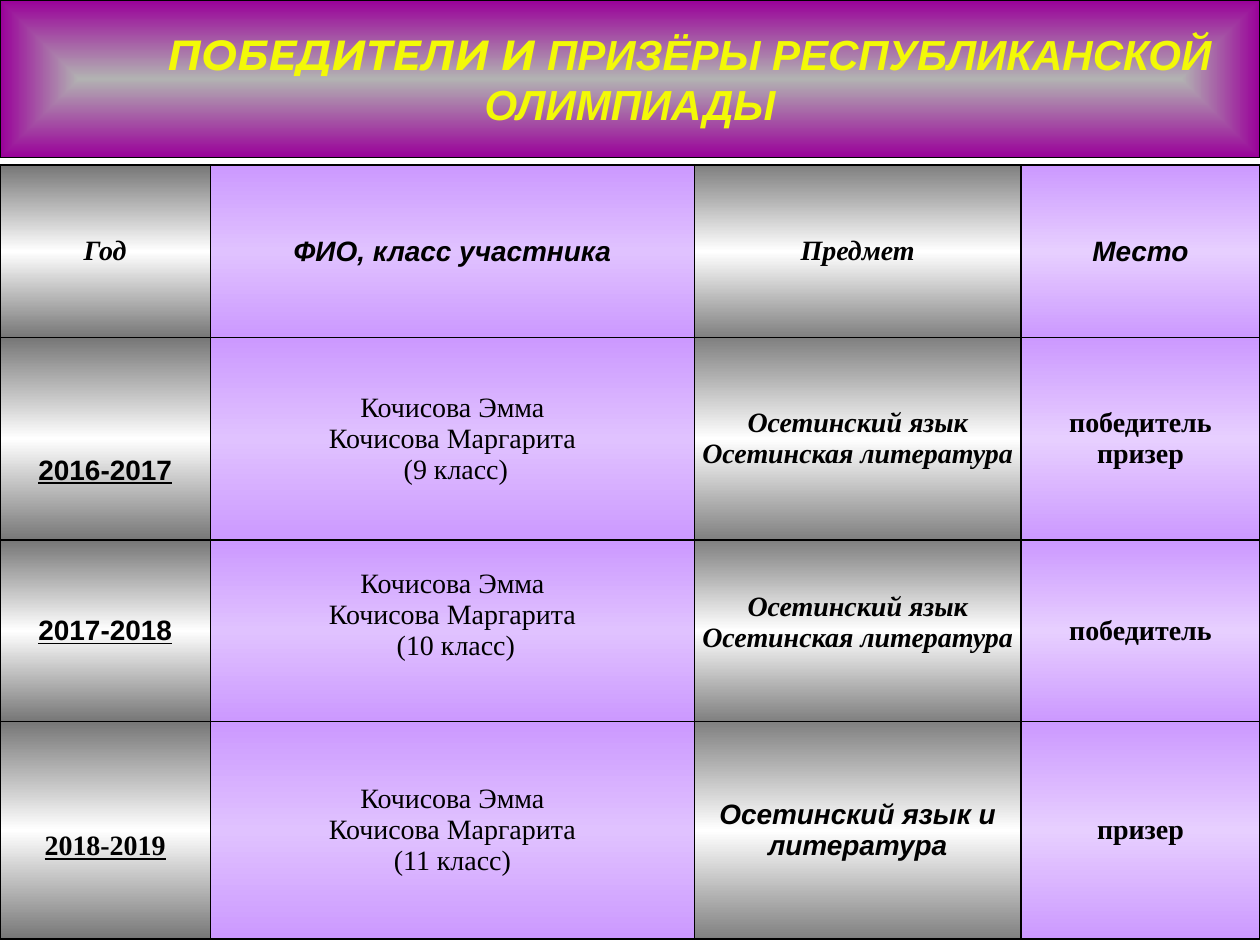
from lxml import etree
from pptx import Presentation
from pptx.dml.color import RGBColor
from pptx.enum.text import MSO_ANCHOR, PP_ALIGN
from pptx.oxml.ns import qn
from pptx.util import Cm, Pt

CENTER = PP_ALIGN.CENTER
MIDDLE = MSO_ANCHOR.MIDDLE
TITLE_ONLY = 5
SERIF, SANS, DISPLAY = "Times New Roman", "Arial", "Montserrat"
BLACK = "000000"

COLUMN_WIDTHS = [4.24, 9.76, 6.58, 4.82]
ROW_HEIGHTS = [3.48, 4.09, 3.66, 4.39]
COLUMN_GRADIENTS = [
    ["777777", "FFFFFF", "777777"],
    ["CC99FF", "E0C2FF", "CC99FF"],
    ["808080", "FFFFFF", "808080"],
    ["CC99FF", "E7CFFF", "CC99FF"],
]
COLUMN_STYLES = [
    {"bold": True, "underline": True},
    {"bold": False},
    {"bold": True, "italic": True},
    {"bold": True},
]
HEADER_STYLE = {"bold": True, "italic": True}
PUPILS = ["Кочисова Эмма", "Кочисова Маргарита"]
SUBJECTS = ["Осетинский язык Осетинская литература"]
ROWS = [
    [["Год"], ["ФИО, класс участника"], ["Предмет"], ["Место"]],
    [["2016-2017"], PUPILS + [" (9 класс)"], SUBJECTS, ["победитель", "призер"]],
    [["2017-2018"], PUPILS + [" (10 класс)"], SUBJECTS, ["победитель"]],
    [["2018-2019"], PUPILS + ["(11 класс)"], ["Осетинский язык и литература"], ["призер"]],
]
SANS_CELLS = {(0, 1), (0, 3), (1, 0), (2, 0), (3, 2)}
CELL_OFFSETS = {
    (1, 0): {"margin_top": Cm(1.27)},
    (2, 1): {"margin_bottom": Cm(0.64)},
    (2, 2): {"margin_bottom": Cm(0.32)},
    (3, 0): {"margin_top": Cm(0.64)},
}


def rgb(value):
    """Turn a hex string into a colour."""
    return RGBColor.from_string(value)


def apply(target, values):
    """Set every attribute named in values on target."""
    for name, value in values.items():
        setattr(target, name, value)


def add_run(paragraph, text, typeface, size, color, style):
    """Append a formatted run to a paragraph."""
    run = paragraph.add_run()
    run.text = text
    apply(run.font, {"name": typeface, "size": Pt(size), **style})
    run.font.color.rgb = rgb(color)


def set_gradient(fill, properties, colors, from_center=False):
    """Fill with evenly spaced colours, downwards or outwards from the centre."""
    fill.gradient()
    gradient = properties.find(qn("a:gradFill"))
    for child in list(gradient):
        gradient.remove(child)
    stops = etree.SubElement(gradient, qn("a:gsLst"))
    for index, color in enumerate(colors):
        position = str(100000 * index // (len(colors) - 1))
        stop = etree.SubElement(stops, qn("a:gs"), pos=position)
        etree.SubElement(stop, qn("a:srgbClr"), val=color)
    if from_center:
        spread = etree.SubElement(gradient, qn("a:path"), path="shape")
        sides = dict.fromkeys("ltrb", "50000")
        etree.SubElement(spread, qn("a:fillToRect"), **sides)
    else:
        etree.SubElement(gradient, qn("a:lin"), ang="5400000", scaled="1")


def set_borders(properties, color, width):
    """Draw the four borders of a table cell."""
    for index, side in enumerate("LRTB"):
        border = etree.Element(qn(f"a:ln{side}"), w=str(Pt(width)))
        solid = etree.SubElement(border, qn("a:solidFill"))
        etree.SubElement(solid, qn("a:srgbClr"), val=color)
        properties.insert(index, border)


def build_title(slide, left, top, width, height):
    """Place the title banner in the given box."""
    title = slide.shapes.title
    apply(title, {"left": left, "top": top, "width": width, "height": height})
    set_gradient(title.fill, title.element.spPr, ["B2B2B2", "990099"], from_center=True)
    title.line.color.rgb = rgb(BLACK)
    title.line.width = Pt(0.75)
    apply(title.text_frame, {"vertical_anchor": MIDDLE, "word_wrap": True})
    paragraph = title.text_frame.paragraphs[0]
    apply(paragraph, {"alignment": CENTER, "line_spacing": 1.0})
    paragraph._p.get_or_add_pPr().set("indent", str(Cm(2.4)))
    for text, typeface in [
        ("ПОБЕДИТЕЛИ И ", DISPLAY),
        ("ПРИЗЁРЫ РЕСПУБЛИКАНСКОЙ ОЛИМПИАДЫ", SANS),
    ]:
        add_run(paragraph, text, typeface, 24, "F3F907", HEADER_STYLE)


def fill_cell(cell, lines, typeface, style, gradient, offsets):
    """Write and format one table cell."""
    margins = dict.fromkeys(["margin_left", "margin_right", "margin_top", "margin_bottom"], 0)
    apply(cell, {**margins, **offsets, "vertical_anchor": MIDDLE})
    frame = cell.text_frame
    for index, line in enumerate(lines):
        paragraph = frame.add_paragraph() if index else frame.paragraphs[0]
        paragraph.alignment = CENTER
        add_run(paragraph, line, typeface, 16, BLACK, style)
    properties = cell._tc.get_or_add_tcPr()
    set_gradient(cell.fill, properties, gradient)
    set_borders(properties, BLACK, 1)


def build_results(slide, left, top, width, height):
    """Place the table of winners in the given box."""
    frame = slide.shapes.add_table(len(ROWS), len(COLUMN_WIDTHS), left, top, width, height)
    results = frame.table
    apply(results, {"first_row": False, "horz_banding": False})
    for column, share in zip(results.columns, COLUMN_WIDTHS):
        column.width = int(width * share / sum(COLUMN_WIDTHS))
    for row, share in zip(results.rows, ROW_HEIGHTS):
        row.height = int(height * share / sum(ROW_HEIGHTS))
    for r, row in enumerate(ROWS):
        for c, lines in enumerate(row):
            typeface = SANS if (r, c) in SANS_CELLS else SERIF
            style = COLUMN_STYLES[c] if r else HEADER_STYLE
            offsets = CELL_OFFSETS.get((r, c), {})
            fill_cell(results.cell(r, c), lines, typeface, style, COLUMN_GRADIENTS[c], offsets)


def main():
    """Build and save the presentation."""
    deck = Presentation()
    apply(deck, {"slide_width": Cm(25.4), "slide_height": Cm(19.05)})
    slide = deck.slides.add_slide(deck.slide_layouts[TITLE_ONLY])
    build_title(slide, 0, 0, deck.slide_width, Cm(3.18))
    build_results(slide, 0, Cm(3.33), deck.slide_width, Cm(15.6))
    deck.save("out.pptx")


if __name__ == "__main__":
    main()
